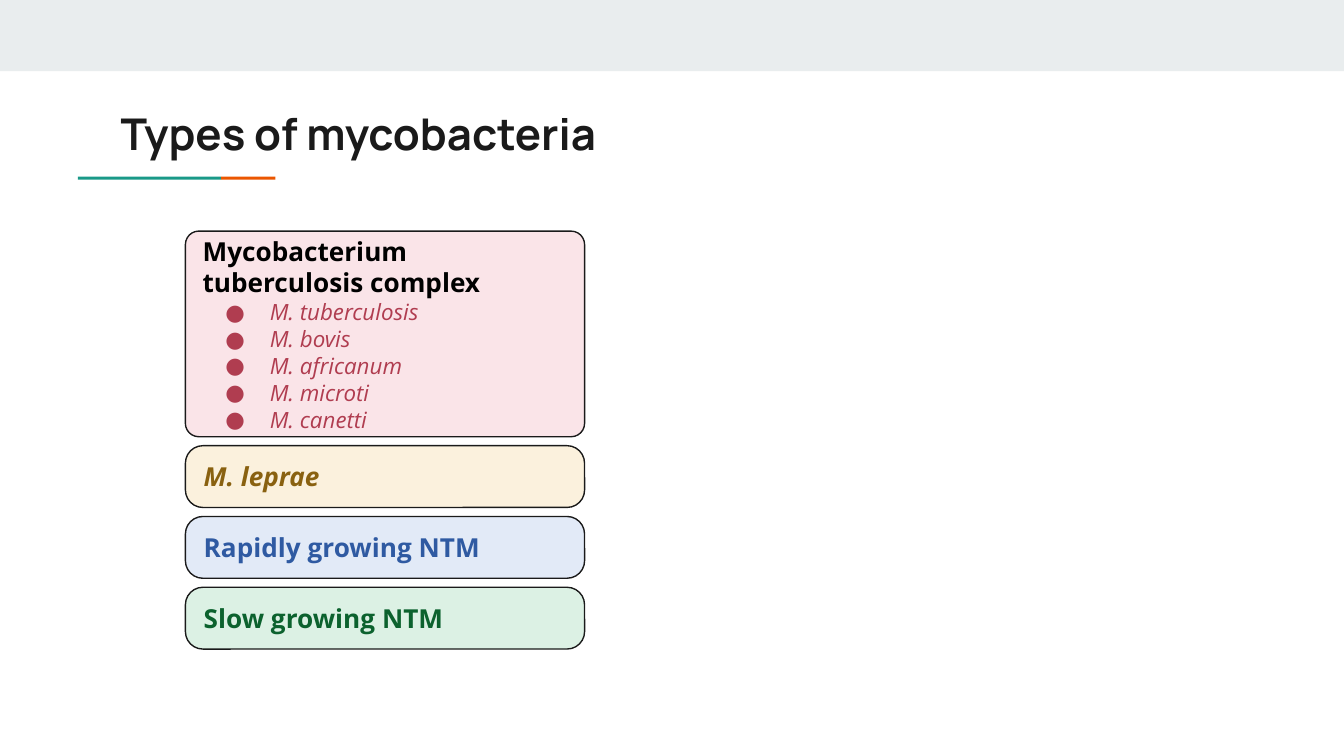
import dataclasses
import typing

import pptx
import pptx.dml.color
import pptx.enum.shapes
import pptx.enum.text
import pptx.oxml.ns
import pptx.util
from lxml import etree

WIDTH = 10
HEIGHT = WIDTH * 9 / 16
COLS = 100
ROWS = COLS * 9 / 16
LEFT, SPAN = 13.8, 29.7
TOP, BOTTOM = 17.2, 48.3
INSET = 1
SHAPES = pptx.enum.shapes.MSO_SHAPE
ANCHORS = pptx.enum.text.MSO_ANCHOR


@dataclasses.dataclass(frozen=True)
class Bar:
    col: float
    row: float
    cols: float
    rows: float
    fill: str


@dataclasses.dataclass(frozen=True)
class Card:
    heading: str
    fill: str
    ink: str
    rows: float = 4.6
    radius: float = 1.3
    italic: bool = False
    species: tuple[str, ...] = ()
    species_ink: str = "B03D50"


BARS = [
    Bar(0, 0, COLS, 5.3, "E9EDEE"),
    Bar(5.8, 13.15, 10.65, 0.23, "1A9988"),
    Bar(16.45, 13.15, 4.05, 0.23, "EB5600"),
]

CARDS = [
    Card("Mycobacterium tuberculosis complex", "FAE4E8", "000000", rows=15.3, radius=1,
         species=("M. tuberculosis", "M. bovis", "M. africanum", "M. microti", "M. canetti")),
    Card("M. leprae", "FBF1DD", "896110", italic=True),
    Card("Rapidly growing NTM", "E2EAF7", "2F5AA2"),
    Card("Slow growing NTM", "DCF1E4", "0C622E"),
]


def color(value: str) -> pptx.dml.color.RGBColor:
    return pptx.dml.color.RGBColor.from_string(value)


def x(cols: float) -> int:
    return pptx.util.Inches(cols * WIDTH / COLS)


def y(rows: float) -> int:
    return pptx.util.Inches(rows * HEIGHT / ROWS)


def set_frame(tf: typing.Any, anchor: typing.Any) -> None:
    values = {
        "word_wrap": True,
        "vertical_anchor": anchor,
        "margin_left": x(INSET),
        "margin_right": x(INSET),
        "margin_top": y(INSET),
        "margin_bottom": y(INSET),
    }
    for name, value in values.items():
        setattr(tf, name, value)


def write(p: typing.Any, text: str, ink: str, font: dict[str, typing.Any]) -> None:
    p.alignment = pptx.enum.text.PP_ALIGN.LEFT
    r = p.add_run()
    r.text = text
    for name, value in font.items():
        setattr(r.font, name, value)
    r.font.color.rgb = color(ink)


def add_bullet(p: typing.Any, ink: str) -> None:
    qn = pptx.oxml.ns.qn
    pPr = p._p.get_or_add_pPr()
    pPr.set("marL", str(x(5)))
    pPr.set("indent", str(x(-3.3)))
    bu = etree.SubElement(pPr, qn("a:buClr"))
    etree.SubElement(bu, qn("a:srgbClr"), val=ink)
    etree.SubElement(pPr, qn("a:buSzPts"), val="1200")
    etree.SubElement(pPr, qn("a:buFont"), typeface="Open Sans")
    etree.SubElement(pPr, qn("a:buChar"), char="●")


def draw_bar(s: typing.Any, bar: Bar) -> None:
    sp = s.shapes.add_shape(SHAPES.RECTANGLE, x(bar.col), y(bar.row), x(bar.cols), y(bar.rows))
    sp.shadow.inherit = False
    sp.fill.solid()
    sp.fill.fore_color.rgb = color(bar.fill)
    sp.line.fill.background()


def draw_title(s: typing.Any, text: str) -> None:
    sp = s.shapes.add_textbox(x(8), y(6.95), x(84.1), y(5.9))
    set_frame(sp.text_frame, ANCHORS.TOP)
    font = {"name": "Manrope", "size": pptx.util.Pt(23.4), "bold": True}
    write(sp.text_frame.paragraphs[0], text, "1A1A1A", font)


def draw_card(s: typing.Any, card: Card, row: float) -> None:
    sp = s.shapes.add_shape(SHAPES.ROUNDED_RECTANGLE, x(LEFT), y(row), x(SPAN), y(card.rows))
    sp.shadow.inherit = False
    sp.adjustments[0] = card.radius / card.rows
    sp.fill.solid()
    sp.fill.fore_color.rgb = color(card.fill)
    sp.line.color.rgb = color("1A1A1A")
    sp.line.width = pptx.util.Pt(0.75)
    tf = sp.text_frame
    set_frame(tf, ANCHORS.MIDDLE)
    font = {"name": "Open Sans", "size": pptx.util.Pt(14), "bold": True, "italic": card.italic}
    write(tf.paragraphs[0], card.heading, card.ink, font)
    font |= {"size": pptx.util.Pt(12), "bold": False, "italic": True}
    for name in card.species:
        p = tf.add_paragraph()
        add_bullet(p, card.species_ink)
        write(p, name, card.species_ink, font)


def main() -> None:
    prs = pptx.Presentation()
    prs.slide_width, prs.slide_height = x(COLS), y(ROWS)
    s = prs.slides.add_slide(prs.slide_layouts[6])
    for bar in BARS:
        draw_bar(s, bar)
    draw_title(s, "Types of mycobacteria")
    gap = (BOTTOM - TOP - sum(card.rows for card in CARDS)) / (len(CARDS) - 1)
    row = TOP
    for card in CARDS:
        draw_card(s, card, row)
        row += card.rows + gap
    prs.save("out.pptx")


if __name__ == "__main__":
    main()
